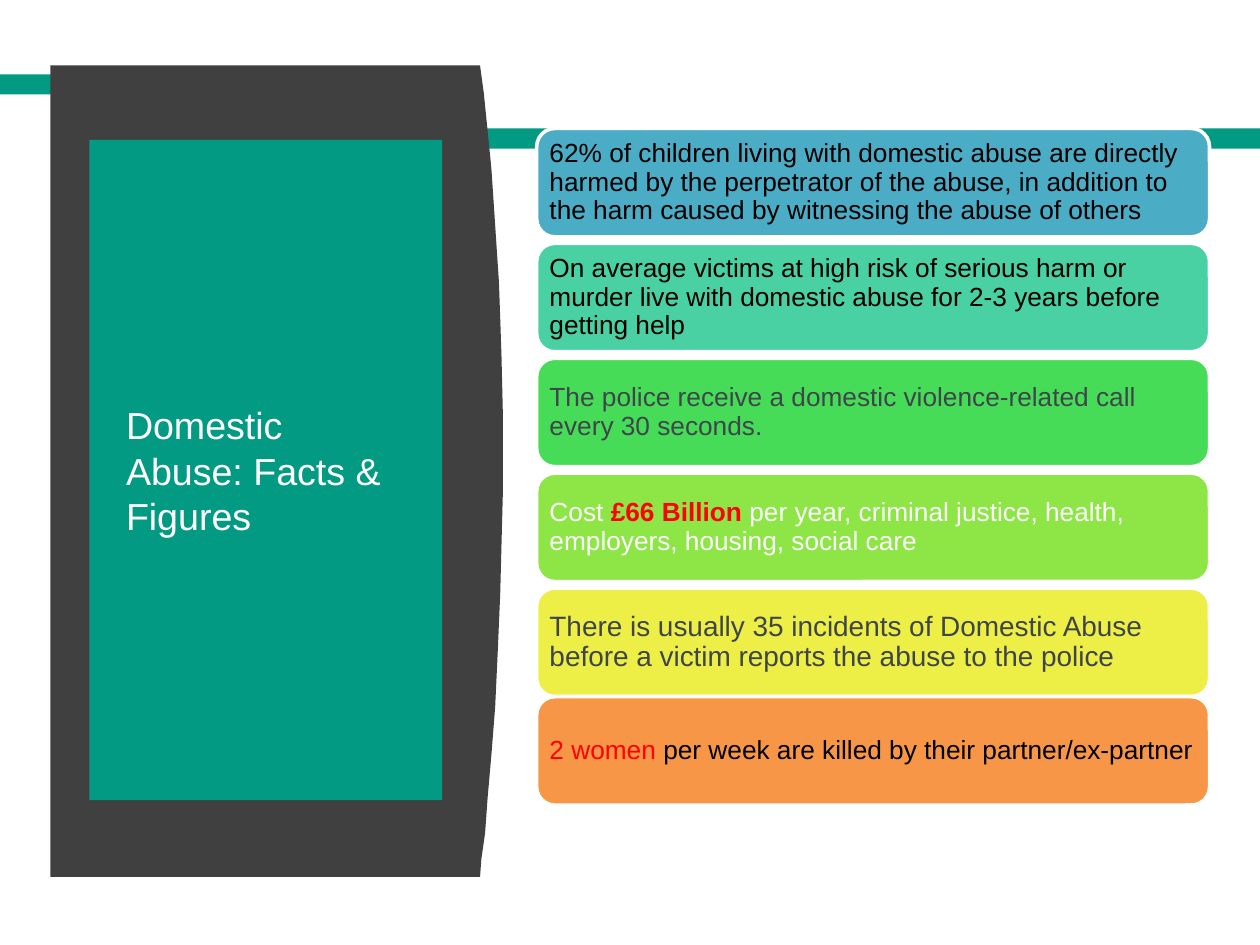
from pptx import Presentation
from pptx.dml.color import RGBColor
from pptx.enum.shapes import MSO_SHAPE
from pptx.enum.text import MSO_ANCHOR, MSO_AUTO_SIZE, PP_ALIGN
from pptx.util import Inches, Pt

TEAL, CHARCOAL, WHITE = "029A83", "404040", "FFFFFF"
BLACK, SLATE, RED = "000000", "3E454B", "FF0000"

# Each fact: card colour, text size, runs of (text, colour, bold)
FACTS = [
    ("4BACC6", 15, [("62% of children living with domestic abuse are directly harmed by "
                     "the perpetrator of the abuse, in addition to the harm caused by "
                     "witnessing the abuse of others", BLACK, False)]),
    ("49D1A3", 15, [("On average victims at high risk of serious harm or murder live with "
                     "domestic abuse for 2-3 years before getting help", BLACK, False)]),
    ("47DC57", 15, [("The police receive a domestic violence-related call every 30 seconds.",
                     SLATE, False)]),
    ("8DE646", 15, [("Cost ", WHITE, False), ("£66 Billion ", RED, True),
                    ("per year, criminal justice, health, employers, housing, social care",
                     WHITE, False)]),
    ("EEEF46", 16, [("There is usually 35 incidents of Domestic Abuse before a victim "
                     "reports the abuse to the police", SLATE, False)]),
    ("F79646", 15, [("2 women ", RED, False),
                    ("per week are killed by their partner/ex-partner", BLACK, False)]),
]

# Curved right edge of the panel, top to bottom
PANEL_EDGE = [(3.81, 0.52), (3.84, 0.74), (3.87, 1.04), (3.9, 1.34), (3.92, 1.64),
              (3.94, 1.94), (3.96, 2.24), (3.97, 2.53), (3.98, 2.82), (3.99, 3.25),
              (3.99, 3.94), (3.98, 4.33), (3.97, 4.71), (3.95, 5.18), (3.93, 5.61),
              (3.9, 5.99), (3.87, 6.33), (3.85, 6.61), (3.82, 6.82), (3.81, 6.96)]


def rgb(hex_colour):
    return RGBColor.from_string(hex_colour)


def paint(shape, colour, outline=None):
    shape.shadow.inherit = False
    shape.fill.solid()
    shape.fill.fore_color.rgb = rgb(colour)
    if outline:
        shape.line.color.rgb = rgb(outline)
        shape.line.width = Pt(2)
    else:
        shape.line.fill.background()


def set_frame(frame, side, top):
    frame.word_wrap = True
    frame.auto_size = MSO_AUTO_SIZE.NONE
    frame.vertical_anchor = MSO_ANCHOR.MIDDLE
    frame.margin_left = frame.margin_right = Inches(side)
    frame.margin_top = frame.margin_bottom = Inches(top)


def style_run(run, size, colour, bold=False):
    run.font.name = "Arial"
    run.font.size = Pt(size)
    run.font.bold = bold
    run.font.color.rgb = rgb(colour)


def add_band(slide, left, top, width, height):
    band = slide.shapes.add_shape(MSO_SHAPE.RECTANGLE, left, top, width, height)
    paint(band, TEAL)


def add_panel(slide, left, edge):
    points = [(Inches(x), Inches(y)) for x, y in edge]
    top, bottom = points[0][1], points[-1][1]
    outline = slide.shapes.build_freeform(left, top, scale=1.0)
    outline.add_line_segments(points + [(left, bottom)], close=True)
    paint(outline.convert_to_shape(), CHARCOAL)


def add_title(slide, left, top, width, height):
    title = slide.shapes.title
    title.left, title.top, title.width, title.height = left, top, width, height
    title.fill.solid()
    title.fill.fore_color.rgb = rgb(TEAL)
    set_frame(title.text_frame, 0.29, 0)
    title.text_frame.text = "Domestic Abuse: Facts & Figures"
    heading = title.text_frame.paragraphs[0]
    heading.alignment = PP_ALIGN.LEFT
    style_run(heading.runs[0], 21.5, WHITE)
    # Bring the title in front of the panel
    slide.shapes._spTree.append(title._element)


def add_card(slide, left, top, width, height, fact):
    colour, size, runs = fact
    card = slide.shapes.add_shape(MSO_SHAPE.ROUNDED_RECTANGLE, left, top, width, height)
    paint(card, colour, WHITE)
    set_frame(card.text_frame, 0.06, 0.06)
    sentence = card.text_frame.paragraphs[0]
    sentence.alignment = PP_ALIGN.LEFT
    sentence.line_spacing = 0.9
    for text, text_colour, bold in runs:
        run = sentence.add_run()
        run.text = text
        style_run(run, size, text_colour, bold)


def add_cards(slide, left, top, width, height):
    card_height, pitch = Inches(0.86), Inches(0.912)
    for index, fact in enumerate(FACTS):
        # The last card sits flush with the bottom of the box
        card_top = min(top + index * pitch, top + height - card_height)
        add_card(slide, left, card_top, width, card_height, fact)


def main():
    prs = Presentation()
    prs.slide_width, prs.slide_height = Inches(10), Inches(7.5)
    slide = prs.slides.add_slide(prs.slide_layouts[5])

    # Teal bands behind the content
    add_band(slide, Inches(0), Inches(0.59), Inches(0.51), Inches(0.16))
    add_band(slide, Inches(3.35), Inches(1.02), Inches(6.65), Inches(0.16))

    # Title panel on the left
    add_panel(slide, Inches(0.4), PANEL_EDGE)
    add_title(slide, Inches(0.71), Inches(1.11), Inches(2.8), Inches(5.24))

    # Fact cards on the right
    add_cards(slide, Inches(4.26), Inches(1.02), Inches(5.34), Inches(5.37))
    prs.save("out.pptx")


if __name__ == "__main__":
    main()
